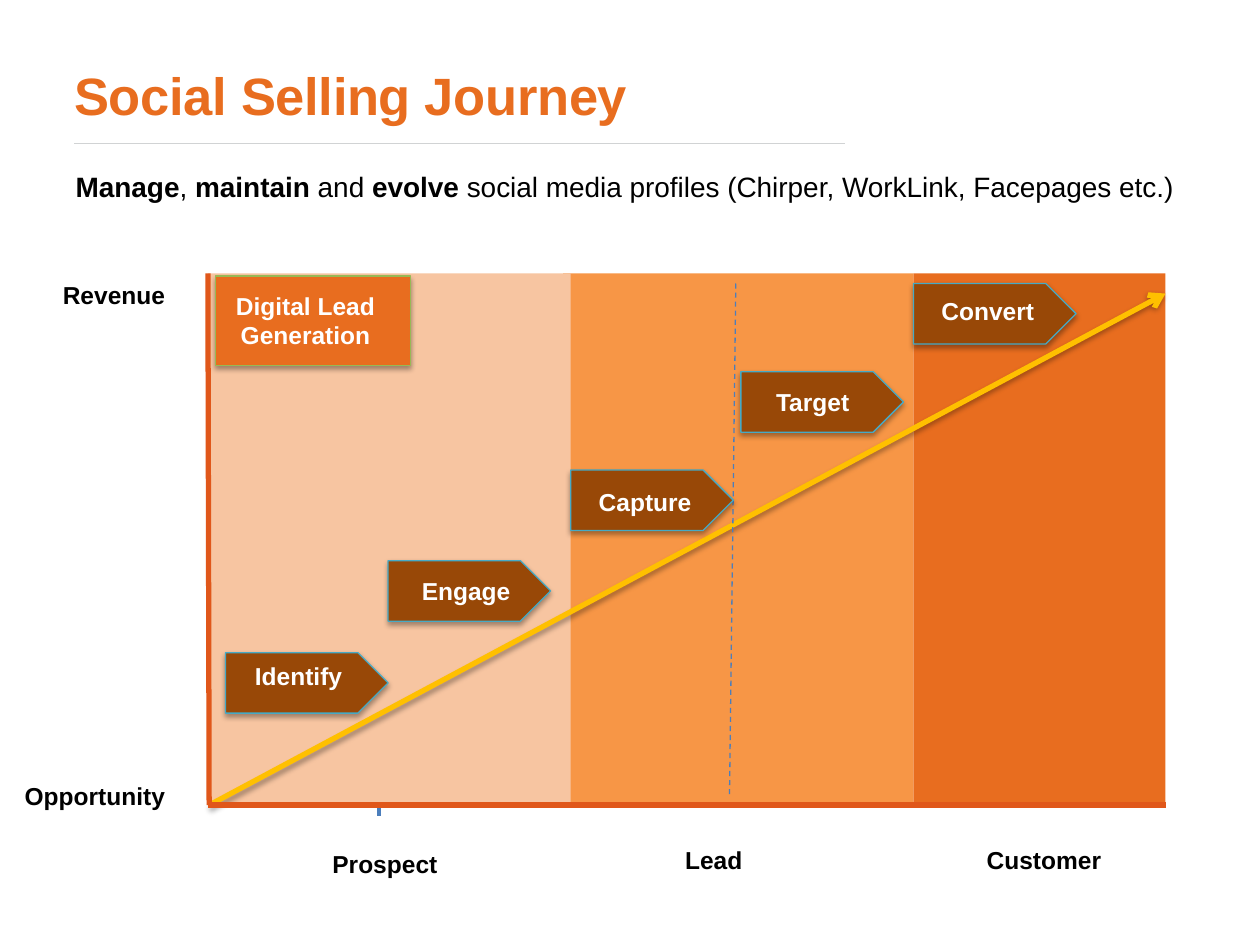
from lxml.etree import SubElement
from pptx import Presentation
from pptx.dml.color import RGBColor
from pptx.enum.dml import MSO_LINE
from pptx.enum.shapes import MSO_CONNECTOR, MSO_SHAPE
from pptx.enum.text import PP_ALIGN
from pptx.oxml import parse_xml
from pptx.oxml.ns import qn
from pptx.util import Inches, Pt

COLORS = {
    "orange": "E86D1F", "amber": "F79646", "peach": "F7C5A1", "brown": "984807",
    "axis": "E0571A", "gold": "FFC000", "blue": "4B7EBC", "teal": "46AAC5",
    "green": "98B955", "gray": "D1D3D4", "black": "000000", "white": "FFFFFF",
}
COLORS = {name: RGBColor.from_string(value) for name, value in COLORS.items()}
SHADOW = (
    '<a:effectLst xmlns:a="http://schemas.openxmlformats.org/drawingml/2006/main">'
    '<a:outerShdw blurRad="39370" dist="22860" dir="5400000" rotWithShape="0">'
    '<a:srgbClr val="000000"><a:alpha val="35000"/></a:srgbClr>'
    '</a:outerShdw></a:effectLst>'
)

deck = Presentation()
deck.slide_width = Inches(10)
deck.slide_height = Inches(7.5)
page = deck.slides.add_slide(deck.slide_layouts[6])


def add_text(left, top, width, height, runs, color="black", size=14, align=PP_ALIGN.CENTER):
    box = page.shapes.add_textbox(Inches(left), Inches(top), Inches(width), Inches(height))
    box.text_frame.word_wrap = True
    para = box.text_frame.paragraphs[0]
    para.alignment = align
    for text, bold in runs:
        span = para.add_run()
        span.text = text
        span.font.name = "Arial"
        span.font.size = Pt(size)
        span.font.bold = bold
        span.font.color.rgb = COLORS[color]
    return box


def add_block(kind, left, top, width, height, fill, outline=None):
    block = page.shapes.add_shape(kind, Inches(left), Inches(top), Inches(width), Inches(height))
    block.fill.solid()
    block.fill.fore_color.rgb = COLORS[fill]
    if outline:
        block.line.color.rgb = COLORS[outline]
        block.line.width = Pt(0.75)
        block._element.spPr.append(parse_xml(SHADOW))
    else:
        block.line.fill.background()
        block.shadow.inherit = False


title = add_text(0.59, 0.5, 8.85, 0.51, [("Social Selling Journey", True)],
                 "orange", 30, PP_ALIGN.LEFT)
frame = title.text_frame
frame.margin_left = frame.margin_right = frame.margin_top = frame.margin_bottom = 0
frame.paragraphs[0].runs[0].font._element.set("spc", "-20")

lines = {}
for name, start_x, start_y, end_x, end_y, color, width in [
    ("rule", 0.59, 1.14, 6.71, 1.14, "gray", 1),
    ("tick", 3.01, 2.3, 3.01, 6.48, "blue", 2.25),
    ("growth", 1.66, 6.39, 9.25, 2.33, "gold", 3),
    ("revenue axis", 1.65, 2.17, 1.66, 6.39, "axis", 3),
    ("stage axis", 9.25, 6.39, 1.65, 6.39, "axis", 3),
    ("lead divider", 5.84, 2.25, 5.79, 6.31, "blue", 0.75),
]:
    if name == "growth":
        for left, band_width, fill in [(7.25, 2, "orange"), (4.47, 2.78, "amber"),
                                       (1.65, 2.88, "peach")]:
            add_block(MSO_SHAPE.RECTANGLE, left, 2.17, band_width, 4.21, fill)
    line = page.shapes.add_connector(MSO_CONNECTOR.STRAIGHT, Inches(start_x), Inches(start_y),
                                     Inches(end_x), Inches(end_y))
    line.line.color.rgb = COLORS[color]
    line.line.width = Pt(width)
    properties = line._element.spPr
    if name == "growth":
        SubElement(properties.find(qn("a:ln")), qn("a:tailEnd"), type="arrow")
        properties.append(parse_xml(SHADOW))
    else:
        SubElement(properties, qn("a:effectLst"))
    lines[name] = line
lines["lead divider"].line.dash_style = MSO_LINE.DASH

for label, left, top, text_left, text_top in [
    ("Identify", 1.79, 5.18, 1.72, 5.2),
    ("Engage", 3.08, 4.45, 3.05, 4.52),
    ("Capture", 4.53, 3.73, 4.47, 3.82),
    ("Target", 5.88, 2.95, 5.8, 3.02),
    ("Convert", 7.25, 2.25, 7.19, 2.3),
]:
    add_block(MSO_SHAPE.PENTAGON, left, top, 1.29, 0.48, "brown", "teal")
    add_text(text_left, text_top, 1.3, 0.34, [(label, True)], "white")

add_block(MSO_SHAPE.RECTANGLE, 1.71, 2.19, 1.55, 0.71, "orange", "green")
add_text(1.69, 2.26, 1.47, 0.57, [("Digital Lead Generation", True)], "white")

for label, left, top in [("Prospect", 2.15, 6.69), ("Lead", 4.76, 6.66), ("Customer", 7.38, 6.66)]:
    add_text(left, top, 1.81, 0.34, [(label, True)])
for label, top in [("Revenue", 2.17), ("Opportunity", 6.15)]:
    add_text(-0.12, top, 1.53, 0.34, [(label, True)], align=PP_ALIGN.RIGHT)

add_text(-0.04, 1.3, 10, 0.37, [
    ("Manage", True), (", ", False), ("maintain", True), (" and ", False), ("evolve", True),
    (" social media profiles (Chirper, WorkLink, Facepages etc.)", False),
], size=16)

deck.save("out.pptx")
